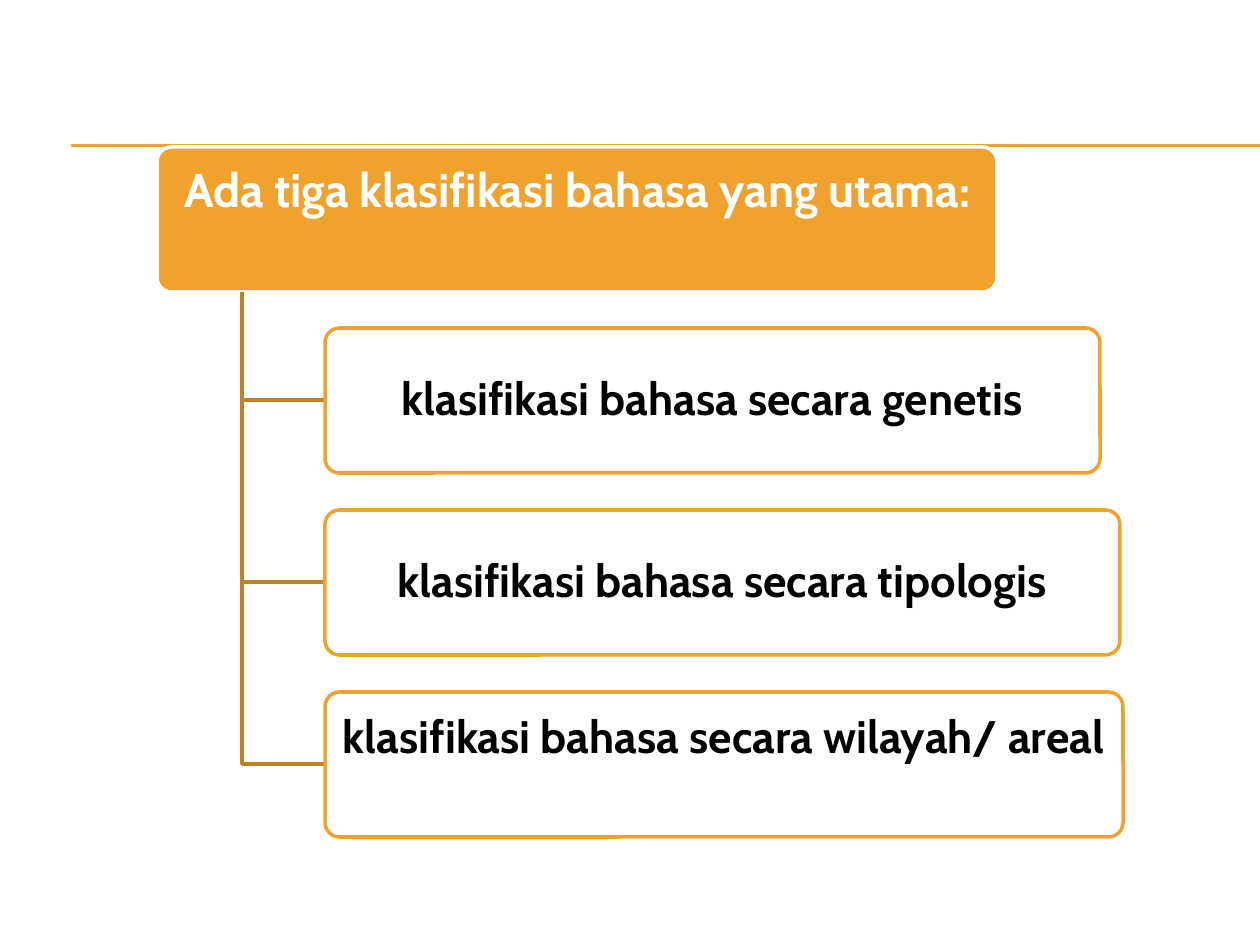
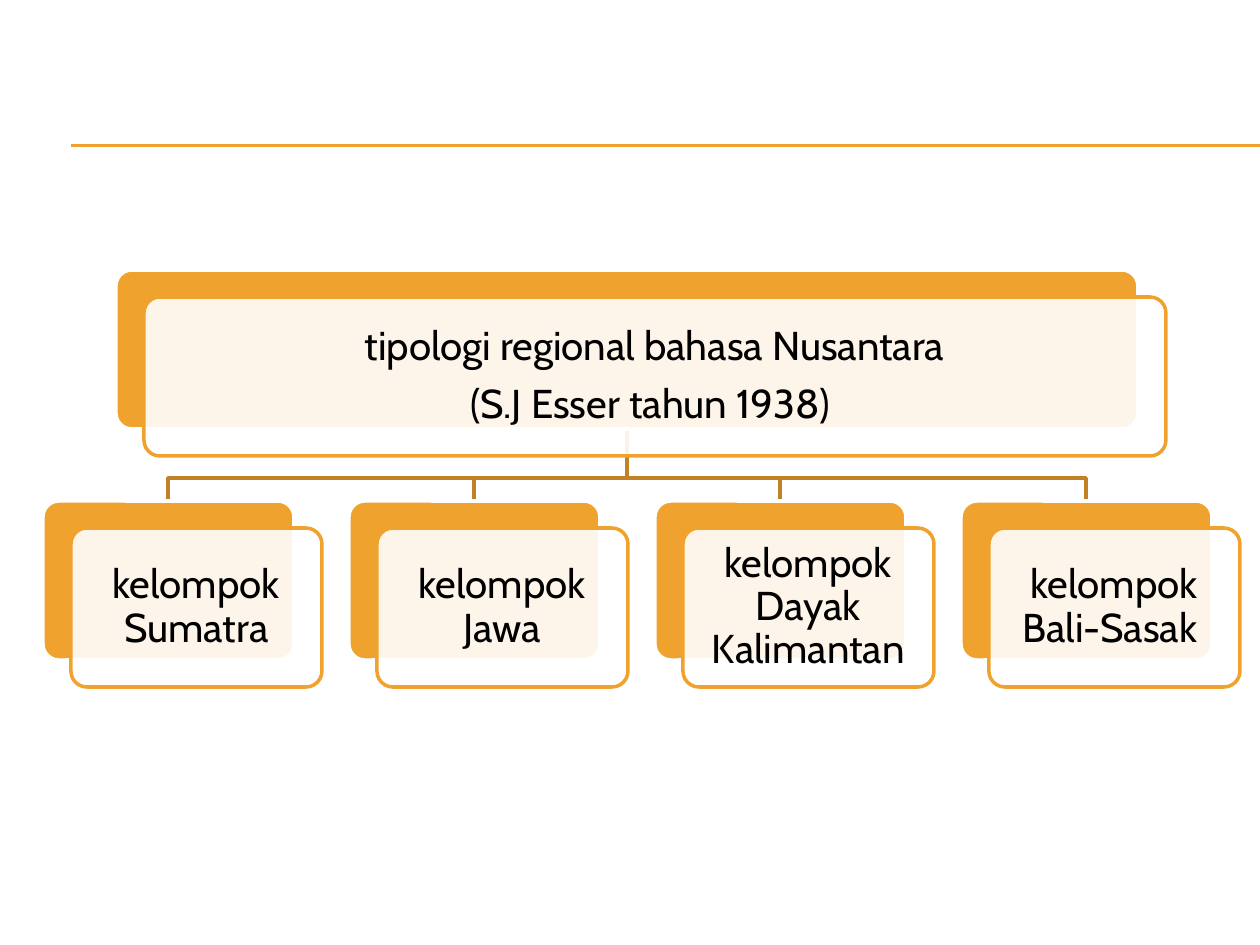
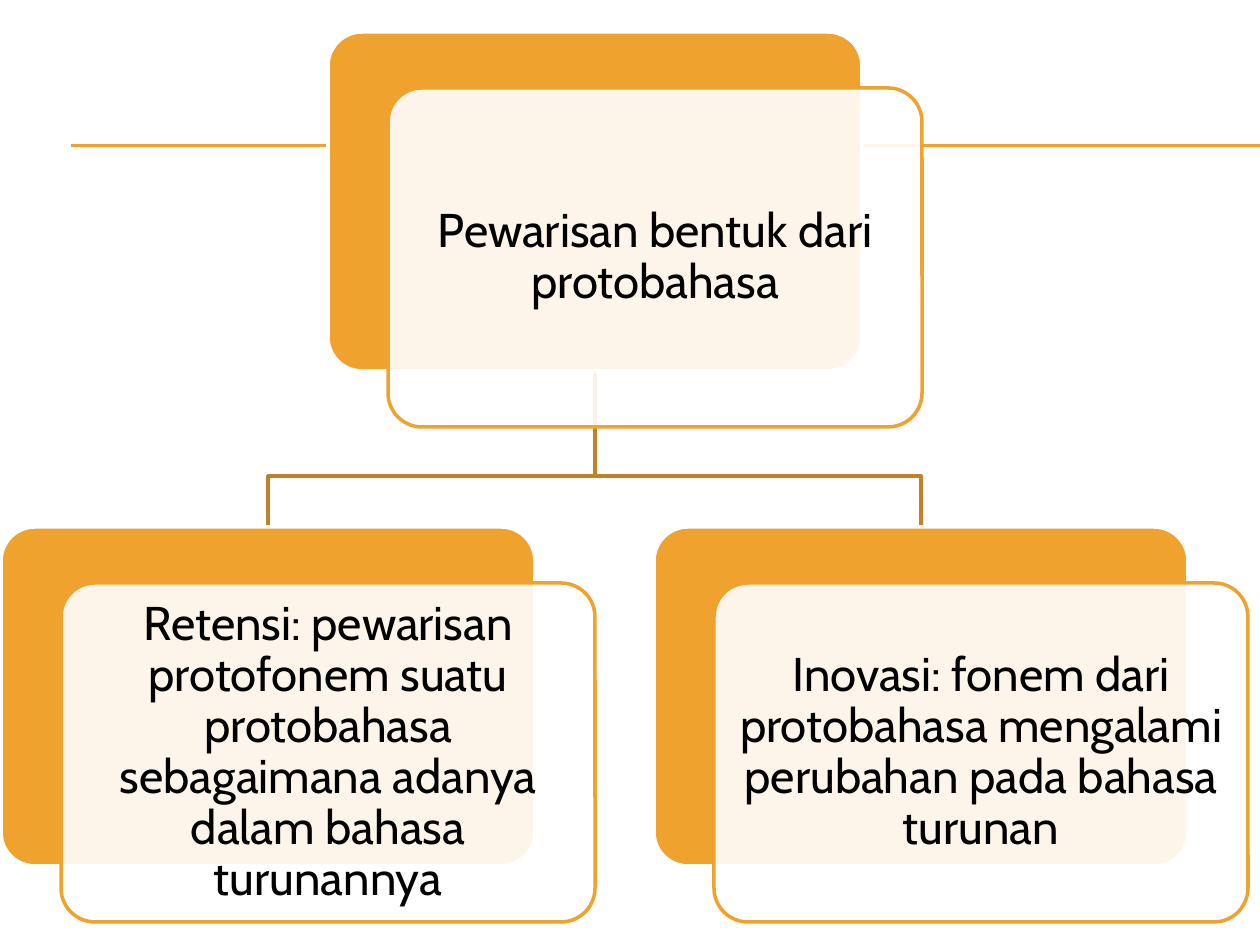
from lxml.etree import SubElement
from pptx import Presentation
from pptx.dml.color import RGBColor
from pptx.enum.shapes import MSO_CONNECTOR, MSO_SHAPE
from pptx.enum.text import MSO_ANCHOR, PP_ALIGN
from pptx.oxml.ns import qn
from pptx.util import Pt

PX = 914400 / 126
WIDTH, HEIGHT = 1260, 945
FONT = "Cabin"
ORANGE, BROWN, WHITE, BLACK = "F0A22E", "C08225", "FFFFFF", "000000"
RULE_LEFT, RULE_YS = 71, (145, 146)

# A top margin lifts the text to the upper part of its box.
HEADING = {"text": "Ada tiga klasifikasi bahasa yang utama:", "box": (157, 147, 840, 145), "top": 15}
KINDS = [
    {"text": "klasifikasi bahasa secara genetis", "width": 775},
    {"text": "klasifikasi bahasa secara tipologis", "width": 795},
    {"text": "klasifikasi bahasa secara wilayah/ areal", "width": 798, "top": 18},
]
KIND_LEFT, KIND_TOP, KIND_HEIGHT, KIND_PITCH = 325, 328, 145, 182
TRUNK_X = 242

TREES = [
    {
        "root": ["tipologi regional bahasa Nusantara", "(S.J Esser tahun 1938) "],
        "root_box": (116, 270, 1022, 159),
        "children": ["kelompok Sumatra", "kelompok Jawa", "kelompok Dayak Kalimantan",
                     "kelompok Bali-Sasak "],
        "child_box": (43, 501, 251, 159),
        "pitch": 306, "offset": (28, 27), "drop": 23, "size": 23, "margin": 13,
    },
    {
        "root": ["Pewarisan bentuk dari protobahasa"],
        "root_box": (328, 32, 534, 339),
        "children": [
            "Retensi: pewarisan protofonem suatu protobahasa sebagaimana adanya dalam bahasa turunannya",
            "Inovasi: fonem dari protobahasa mengalami perubahan pada bahasa turunan",
        ],
        "child_box": (1, 527, 534, 339),
        "pitch": 653, "offset": (60, 56), "drop": 51, "size": 27, "margin": 14,
    },
]


def px(n):
    return round(n * PX)


def rgb(value):
    return RGBColor.from_string(value)


def set_line(s, color, width):
    s.line.color.rgb = rgb(color)
    s.line.width = Pt(width)


def new_slide(prs):
    """Add a blank slide with the double rule below the title area."""
    slide = prs.slides.add_slide(prs.slide_layouts[6])
    for y in RULE_YS:
        s = slide.shapes.add_connector(MSO_CONNECTOR.STRAIGHT, px(RULE_LEFT), px(y), px(WIDTH), px(y))
        set_line(s, ORANGE, 0.75)
        SubElement(s._element.spPr, qn("a:effectLst"))
    return slide


def add_box(slide, box, solid):
    """Add a rounded box: solid orange, or nearly opaque white with an orange edge."""
    s = slide.shapes.add_shape(MSO_SHAPE.ROUNDED_RECTANGLE, *map(px, box))
    s.adjustments[0] = 0.1
    s.shadow.inherit = False
    s.fill.solid()
    s.fill.fore_color.rgb = rgb(ORANGE if solid else WHITE)
    set_line(s, WHITE if solid else ORANGE, 2)
    if not solid:
        color = s._element.spPr.find(qn("a:solidFill")).find(qn("a:srgbClr"))
        SubElement(color, qn("a:alpha"), val="90000")
    return s


def write(s, lines, margins, size, color=BLACK, bold=False, anchor=MSO_ANCHOR.MIDDLE):
    """Fill a box with centred paragraphs; margins are (side, top, bottom)."""
    side, top, bottom = margins
    tf = s.text_frame
    frame = {"word_wrap": True, "vertical_anchor": anchor,
             "margin_left": px(side), "margin_right": px(side),
             "margin_top": px(top), "margin_bottom": px(bottom)}
    for name, value in frame.items():
        setattr(tf, name, value)
    for i, line in enumerate(lines):
        p = tf.add_paragraph() if i else tf.paragraphs[0]
        p.alignment = PP_ALIGN.CENTER
        p.line_spacing = 0.9
        if i < len(lines) - 1:
            p.space_after = Pt(round(size * 0.35))
        r = p.add_run()
        r.text = line
        for name, value in {"name": FONT, "size": Pt(size), "bold": bold}.items():
            setattr(r.font, name, value)
        r.font.color.rgb = rgb(color)


def write_label(s, item, side, size, color):
    lifted = "top" in item
    write(s, [item["text"]], (side, item.get("top", 5), 5), size, color, True,
          MSO_ANCHOR.TOP if lifted else MSO_ANCHOR.MIDDLE)


def add_branch(slide, points):
    builder = slide.shapes.build_freeform(*points[0], scale=PX)
    builder.add_line_segments(points[1:], close=False)
    s = builder.convert_to_shape()
    s.shadow.inherit = False
    s.fill.background()
    set_line(s, BROWN, 2)


def add_card(slide, box, lines, tree):
    """Add an orange card with a shifted white card that carries the text."""
    x, y, w, h = box
    dx, dy = tree["offset"]
    add_box(slide, box, True)
    front = add_box(slide, (x + dx, y + dy, w, h), False)
    write(front, lines, (tree["margin"],) * 3, tree["size"])


def build_list(prs):
    slide = new_slide(prs)
    write_label(add_box(slide, HEADING["box"], True), HEADING, 8, 27, WHITE)
    trunk_top = HEADING["box"][1] + HEADING["box"][3]
    for i, kind in enumerate(KINDS):
        y = KIND_TOP + i * KIND_PITCH
        middle = y + KIND_HEIGHT / 2
        add_branch(slide, [(TRUNK_X, trunk_top), (TRUNK_X, middle), (KIND_LEFT, middle)])
        s = add_box(slide, (KIND_LEFT, y, kind["width"], KIND_HEIGHT), False)
        write_label(s, kind, 6, 26, BLACK)


def build_tree(prs, tree):
    slide = new_slide(prs)
    x, y, w, h = tree["root_box"]
    left, top, width, height = tree["child_box"]
    root_x, bus_y = x + w / 2, top - tree["drop"]
    lefts = [left + i * tree["pitch"] for i in range(len(tree["children"]))]
    for child_left in lefts:
        child_x = child_left + width / 2
        add_branch(slide, [(root_x, y + h), (root_x, bus_y), (child_x, bus_y), (child_x, top)])
    add_card(slide, tree["root_box"], tree["root"], tree)
    for child_left, text in zip(lefts, tree["children"]):
        add_card(slide, (child_left, top, width, height), [text], tree)


def main():
    prs = Presentation()
    prs.slide_width, prs.slide_height = px(WIDTH), px(HEIGHT)
    build_list(prs)
    for tree in TREES:
        build_tree(prs, tree)
    prs.save("out.pptx")


if __name__ == "__main__":
    main()
